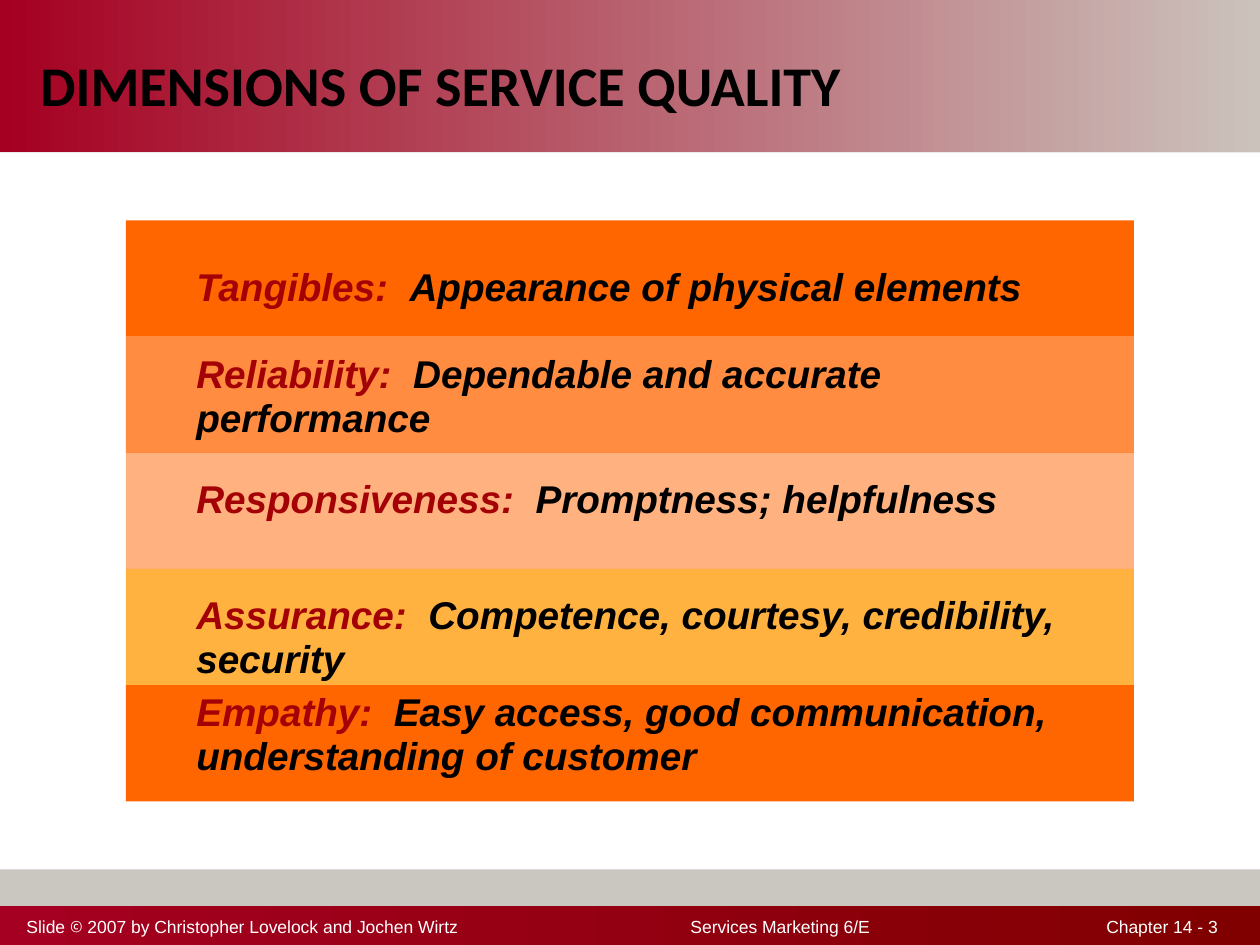
import pptx
import pptx.dml.color
import pptx.enum.shapes
import pptx.enum.text
import pptx.oxml.ns
import pptx.util
from lxml import etree

Inches = pptx.util.Inches
Pt = pptx.util.Pt
ANCHOR = pptx.enum.text.MSO_ANCHOR

WIDTH, HEIGHT = 10, 7.5
DIMENSION_FORMAT = {"name": "Arial", "size": Pt(22.1), "bold": True, "italic": True}
FOOTER_FORMAT = {"name": "Arial", "size": Pt(10)}
TITLE_FORMAT = {"name": "Calibri", "size": Pt(32), "bold": True}

# Term, description, band colour, opacity in percent, text offset in band
DIMENSIONS = [
    ("Tangibles:", "Appearance of physical elements", "FF6600", 100, 0.31),
    ("Reliability:", "Dependable and accurate performance", "FF6600", 75, 0.08),
    ("Responsiveness:", "Promptness; helpfulness", "FF6600", 50, 0.15),
    ("Assurance:", "Competence, courtesy, credibility, security", "FF9900", 75, 0.15),
    ("Empathy:", "Easy access, good communication, understanding of customer",
     "FF6600", 100, 0),
]


def color(value):
    return pptx.dml.color.RGBColor.from_string(value)


def set_attributes(target, values):
    for name, value in values.items():
        setattr(target, name, value)


def add_run(paragraph, text, value, font_format):
    run = paragraph.add_run()
    run.text = text
    set_attributes(run.font, font_format)
    run.font.color.rgb = color(value)


def add_rectangle(slide, left, top, width, height):
    shape = slide.shapes.add_shape(
        pptx.enum.shapes.MSO_SHAPE.RECTANGLE,
        Inches(left), Inches(top), Inches(width), Inches(height))
    shape.shadow.inherit = False
    shape.line.fill.background()
    return shape


def fill_solid(target, value):
    target.fill.solid()
    target.fill.fore_color.rgb = color(value)


def set_opacity(shape, percent):
    rgb = next(shape.element.spPr.iter(pptx.oxml.ns.qn("a:srgbClr")))
    etree.SubElement(rgb, pptx.oxml.ns.qn("a:alpha"), val=str(percent * 1000))


def fill_gradient(shape, start, end):
    shape.fill.gradient()
    shape.fill.gradient_angle = 0
    for position, (stop, value) in enumerate(zip(shape.fill.gradient_stops, (start, end))):
        stop.color.rgb = color(value)
        stop.position = position


def add_text_box(slide, left, top, width, height):
    box = slide.shapes.add_textbox(
        Inches(left), Inches(top), Inches(width), Inches(height))
    box.text_frame.word_wrap = True
    return box.text_frame


def add_header(slide, left, top, width, height):
    fill_gradient(add_rectangle(slide, left, top, width, height), "A50021", "CBC2BC")
    title = slide.shapes.title
    title.element.getparent().append(title.element)  # bring in front of the header
    set_attributes(title, {
        "left": Inches(left + 0.22), "top": Inches(top + 0.41),
        "width": Inches(8.71), "height": Inches(1.15)})
    title.text_frame.vertical_anchor = ANCHOR.TOP
    paragraph = title.text_frame.paragraphs[0]
    set_attributes(paragraph, {
        "alignment": pptx.enum.text.PP_ALIGN.LEFT, "line_spacing": 0.9})
    add_run(paragraph, "DIMENSIONS OF SERVICE QUALITY", "000000", TITLE_FORMAT)


def add_dimensions(slide, left, top, width, height):
    pitch = height / len(DIMENSIONS)
    for index, (term, description, value, opacity, offset) in enumerate(DIMENSIONS):
        band_top = top + index * pitch
        band = add_rectangle(slide, left, band_top, width, pitch)
        fill_solid(band, value)
        if opacity < 100:
            set_opacity(band, opacity)
        frame = add_text_box(slide, left + 0.46, band_top + offset, width - 0.53, 0.81)
        paragraph = frame.paragraphs[0]
        paragraph.line_spacing = 0.95
        add_run(paragraph, term + "  ", "A30105", DIMENSION_FORMAT)
        add_run(paragraph, description, "000000", DIMENSION_FORMAT)


def add_footer(slide, left, top, width, height):
    fill_gradient(add_rectangle(slide, left, top, width, height), "A50021", "800000")
    frame = add_text_box(slide, left + 0.21, top + 0.03, width - 0.21, height - 0.04)
    set_attributes(frame, {
        "margin_left": 0, "margin_right": 0, "margin_top": 0, "margin_bottom": 0,
        "vertical_anchor": ANCHOR.MIDDLE})
    paragraph = frame.paragraphs[0]
    properties = paragraph._p.get_or_add_pPr()
    tabs = etree.SubElement(properties, pptx.oxml.ns.qn("a:tabLst"))
    for position in (5.27, 8.57):
        etree.SubElement(tabs, pptx.oxml.ns.qn("a:tab"),
                         pos=str(Inches(position)), algn="l")
    add_run(paragraph, "Slide ", "FFFFFF", FOOTER_FORMAT)
    add_run(paragraph, "©", "FFFFFF", {**FOOTER_FORMAT, "name": "Cabin"})
    add_run(paragraph, " 2007 by Christopher Lovelock and Jochen Wirtz"
            "\tServices Marketing 6/E\tChapter 14 - 3", "FFFFFF", FOOTER_FORMAT)


def main():
    presentation = pptx.Presentation()
    presentation.slide_width = Inches(WIDTH)
    presentation.slide_height = Inches(HEIGHT)
    slide = presentation.slides.add_slide(presentation.slide_layouts[5])
    fill_solid(slide.background, "CAC7C1")
    fill_solid(add_rectangle(slide, 0, 1.21, WIDTH, 5.69), "FFFFFF")
    add_header(slide, 0, 0, WIDTH, 1.21)
    add_dimensions(slide, 1, 1.75, 8, 4.61)
    add_footer(slide, 0, 7.19, WIDTH, 0.31)
    presentation.save("out.pptx")


if __name__ == "__main__":
    main()
